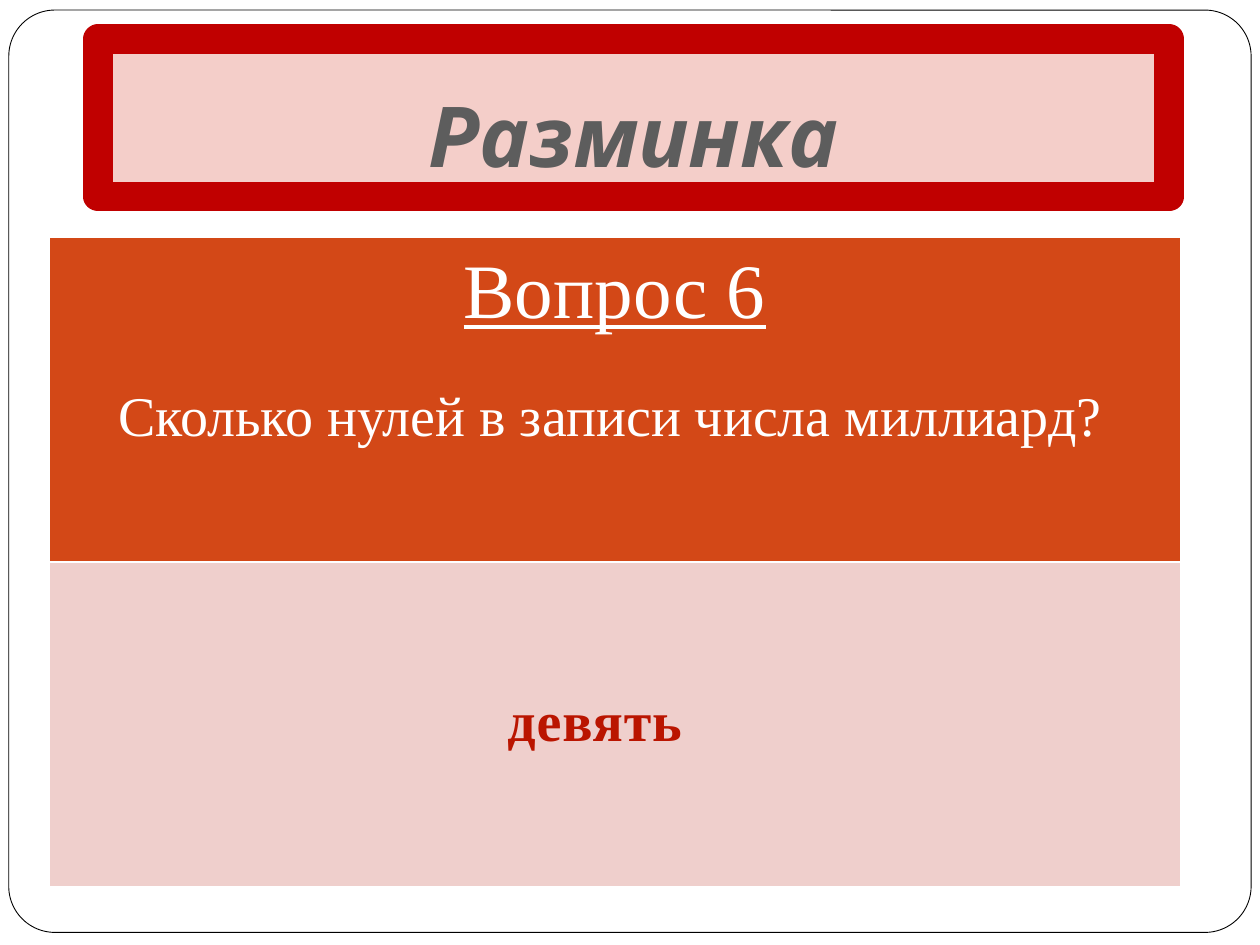
import pptx
import pptx.util
import pptx.dml.color
import pptx.enum.shapes
import pptx.enum.text
import pptx.oxml
import pptx.oxml.ns

Inches = pptx.util.Inches
Pt = pptx.util.Pt
RGBColor = pptx.dml.color.RGBColor

WHITE = RGBColor(0xFF, 0xFF, 0xFF)
BLACK = RGBColor(0, 0, 0)
ORANGE = RGBColor(0xD3, 0x48, 0x17)
PALE_ROSE = RGBColor(0xEF, 0xCF, 0xCC)
TITLE_ROSE = RGBColor(0xF4, 0xCE, 0xC9)
DARK_RED = RGBColor(0xC0, 0, 0)
ANSWER_RED = RGBColor(0xBA, 0x15, 0)
GREY = RGBColor(0x5D, 0x5D, 0x5D)

FRAME_BOX = (0.07, 0.08, 9.86, 7.32)
TITLE_BOX = (0.78, 0.31, 8.5, 1.25)
TABLE_BOX = (0.39, 1.88, 8.98, 5.16)
ROW_COLORS = (ORANGE, PALE_ROSE)
TITLE = ("Разминка", "Karla", 48, GREY, {"bold": True, "italic": True})
SERIF = "Times New Roman"
LABELS = [
    ((0.47, 2.97, 8.75, 0.64),
     ("Сколько нулей в записи числа миллиард?", SERIF, 32, WHITE, {})),
    ((2.81, 1.87, 4.14, 0.84),
     ("Вопрос 6", SERIF, 44, WHITE, {"underline": True})),
    ((2.73, 5.39, 3.98, 0.64),
     ("девять", SERIF, 32, ANSWER_RED, {"bold": True})),
]
ANSWER_SPACING = "50"


def lengths(box):
    return [Inches(value) for value in box]


def write(text_frame, content):
    text, font_name, size, color, styles = content
    paragraph = text_frame.paragraphs[0]
    paragraph.alignment = pptx.enum.text.PP_ALIGN.CENTER
    run = paragraph.add_run()
    run.text = text
    run.font.name = font_name
    run.font.size = Pt(size)
    run.font.color.rgb = color
    for style, value in styles.items():
        setattr(run.font, style, value)
    return run


def paint(shape, fill_color, line_color, line_width):
    shape.fill.solid()
    shape.fill.fore_color.rgb = fill_color
    shape.line.color.rgb = line_color
    shape.line.width = Pt(line_width)


def add_frame(slide):
    frame = slide.shapes.add_shape(
        pptx.enum.shapes.MSO_SHAPE.ROUNDED_RECTANGLE, *lengths(FRAME_BOX))
    frame.adjustments[0] = 0.05
    frame.shadow.inherit = False
    paint(frame, WHITE, BLACK, 0.5)
    slide.shapes._spTree.insert(2, frame._element)


def add_title(slide):
    title = slide.shapes.title
    title.left, title.top, title.width, title.height = lengths(TITLE_BOX)
    paint(title, TITLE_ROSE, DARK_RED, 17)
    text_frame = title.text_frame
    text_frame.auto_size = pptx.enum.text.MSO_AUTO_SIZE.NONE
    text_frame.vertical_anchor = pptx.enum.text.MSO_ANCHOR.BOTTOM
    text_frame.margin_bottom = Inches(0.1)
    write(text_frame, TITLE)


def add_table(slide):
    table = slide.shapes.add_table(len(ROW_COLORS), 1, *lengths(TABLE_BOX)).table
    for row, color in enumerate(ROW_COLORS):
        cell = table.cell(row, 0)
        properties = cell._tc.get_or_add_tcPr()
        for side in ("lnL", "lnR", "lnT", "lnB"):
            properties.append(pptx.oxml.parse_xml(
                f'<a:{side} {pptx.oxml.ns.nsdecls("a")} w="{Pt(1)}">'
                f'<a:solidFill><a:srgbClr val="{WHITE}"/></a:solidFill></a:{side}>'))
        cell.fill.solid()
        cell.fill.fore_color.rgb = color


def add_labels(slide):
    for box, content in LABELS:
        text_frame = slide.shapes.add_textbox(*lengths(box)).text_frame
        text_frame.word_wrap = True
        run = write(text_frame, content)
    run.font._element.set("spc", ANSWER_SPACING)


def main():
    presentation = pptx.Presentation()
    presentation.slide_width = Inches(10)
    presentation.slide_height = Inches(7.5)
    slide = presentation.slides.add_slide(presentation.slide_layouts[5])
    add_frame(slide)
    add_title(slide)
    add_table(slide)
    add_labels(slide)
    presentation.save("out.pptx")


if __name__ == "__main__":
    main()
